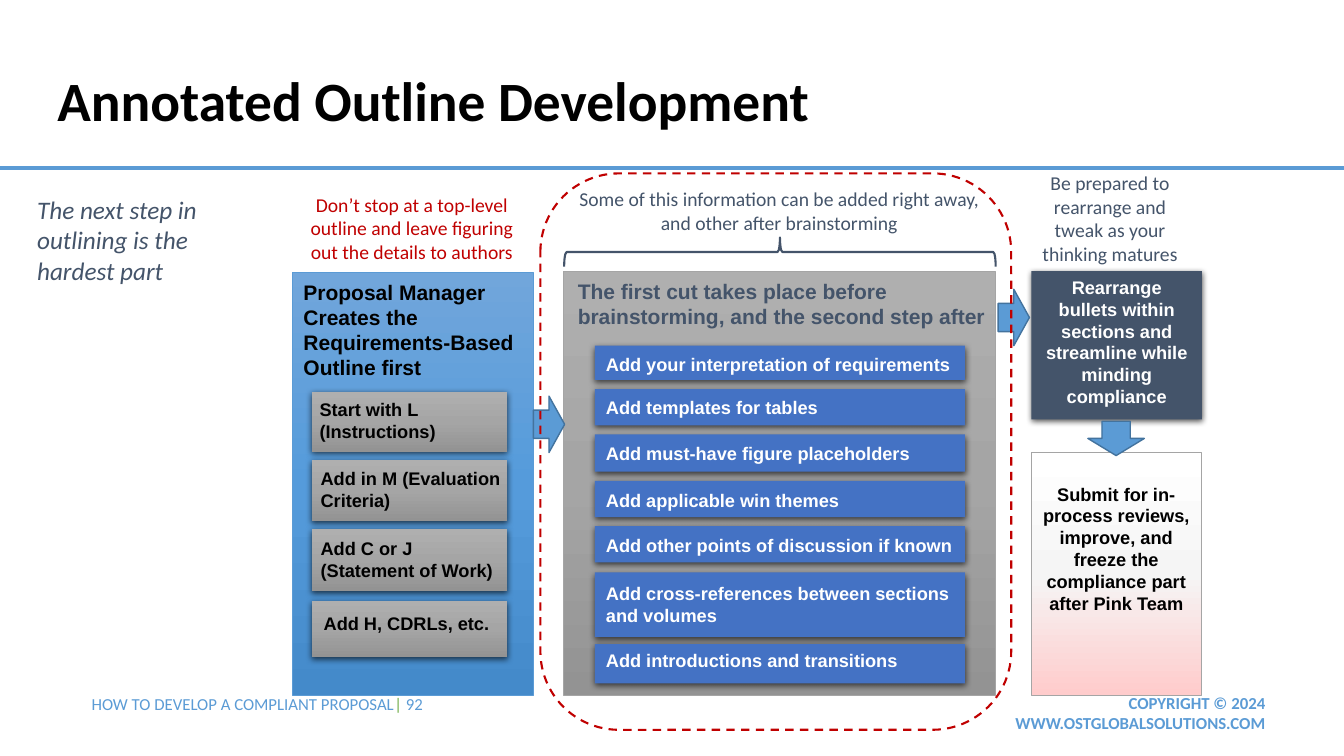
"""Build the Annotated Outline Development slide."""
from copy import deepcopy

from lxml.etree import SubElement
from pptx import Presentation
from pptx.dml.color import RGBColor
from pptx.enum.dml import MSO_LINE
from pptx.enum.shapes import MSO_CONNECTOR, MSO_SHAPE
from pptx.enum.text import MSO_ANCHOR, PP_ALIGN
from pptx.oxml.ns import qn
from pptx.util import Pt

PX = 9144
BLACK = RGBColor(0x00, 0x00, 0x00)
WHITE = RGBColor(0xFF, 0xFF, 0xFF)
SLATE = RGBColor(0x44, 0x54, 0x6A)
SKY = RGBColor(0x5B, 0x9B, 0xD5)
SKY_EDGE = RGBColor(0x43, 0x73, 0x9E)
ROYAL = RGBColor(0x44, 0x72, 0xC4)
GREEN = RGBColor(0x70, 0xAD, 0x47)
RED = RGBColor(0xC0, 0x00, 0x00)
GREY = RGBColor(0xA5, 0xA5, 0xA5)
GREY_FADE = (RGBColor(0xAF, 0xAF, 0xAF), GREY, RGBColor(0x93, 0x93, 0x93))
SKY_FADE = (RGBColor(0x71, 0xA6, 0xDB), RGBColor(0x55, 0x9B, 0xDB), RGBColor(0x44, 0x8A, 0xCA))
PINK_FADE = (WHITE, RGBColor(0xF5, 0xF5, 0xF5), RGBColor(0xFF, 0xCC, 0xCC))

deck = Presentation()
deck.slide_width, deck.slide_height = 1333 * PX, 750 * PX
page = deck.slides.add_slide(deck.slide_layouts[6])


def write(box, text, size=13, color=BLACK, font="Arial", bold=True, italic=False,
          align=PP_ALIGN.LEFT, anchor=MSO_ANCHOR.TOP, inset=(10, 5, 10, 5), spacing=None):
    """Fill a box with a string, or with one paragraph of (text, color) pieces."""
    frame = box.text_frame
    frame.word_wrap = True
    frame.vertical_anchor = anchor
    frame.margin_left, frame.margin_top, frame.margin_right, frame.margin_bottom = (
        side * PX for side in inset)
    lines = [[(line, color)] for line in text.split("\n")] if isinstance(text, str) else [text]
    for index, pieces in enumerate(lines):
        para = frame.add_paragraph() if index else frame.paragraphs[0]
        para.alignment = align
        para.line_spacing = spacing
        for piece, piece_color in pieces:
            span = para.add_run()
            span.text = piece
            span.font.name, span.font.size = font, Pt(size)
            span.font.bold, span.font.italic = bold, italic
            span.font.color.rgb = piece_color


def draw(kind, at, fill=None, line=None, width=0.5, shadow=False):
    """Add a preset shape with a plain, three-stop or empty fill."""
    shape = page.shapes.add_shape(kind, *(length * PX for length in at))
    shape.shadow.inherit = False
    if fill is None:
        shape.fill.background()
    elif isinstance(fill, RGBColor):
        shape.fill.solid()
        shape.fill.fore_color.rgb = fill
    else:
        shape.fill.gradient()
        shape.fill.gradient_angle = 270
        stop_list = shape.element.spPr.find(".//" + qn("a:gsLst"))
        stop_list.insert(1, deepcopy(stop_list[0]))
        for stop, color, position in zip(shape.fill.gradient_stops, fill, (0, 0.5, 1)):
            stop.color.rgb = color
            stop.position = position
    if line is None:
        shape.line.fill.background()
    else:
        shape.line.color.rgb = line
        shape.line.width = Pt(width)
    if shadow:
        effects = shape.element.spPr.find(qn("a:effectLst"))
        outer = SubElement(effects, qn("a:outerShdw"), blurRad=str(Pt(4.5)), dist=str(Pt(1.5)),
                           dir="5400000", algn="ctr", rotWithShape="0")
        tint = SubElement(outer, qn("a:srgbClr"), val="000000")
        SubElement(tint, qn("a:alpha"), val="63000")
    return shape


rule = page.shapes.add_connector(MSO_CONNECTOR.STRAIGHT, 0, 167 * PX, 1333 * PX, 167 * PX)
rule.line.color.rgb = SKY
rule.line.width = Pt(3)
SubElement(rule.element.spPr, qn("a:effectLst"))

manager_panel = draw(MSO_SHAPE.RECTANGLE, (290, 270, 239, 420), SKY_FADE, SKY)
write(manager_panel, "Proposal Manager\nCreates the\nRequirements-Based Outline first",
      size=15, inset=(11, 7, 0, 0))
cut_panel = draw(MSO_SHAPE.RECTANGLE, (559, 269, 428, 421), GREY_FADE, GREY)
write(cut_panel, "The first cut takes place before brainstorming, and the second step after",
      size=15, color=SLATE, inset=(14, 7, 6, 0))

outline_steps = [
    (389, 59, 8, 6, "Start with L (Instructions)"),
    (456, 61, 9, 8, "Add in M (Evaluation Criteria)"),
    (525, 61, 9, 8, "Add C or J (Statement of Work)"),
    (596, 56, 12, 11, "Add H, CDRLs, etc."),
]
for top, height, left_inset, top_inset, text in outline_steps:
    card = draw(MSO_SHAPE.RECTANGLE, (309, top, 194, height), GREY_FADE, shadow=True)
    write(card, text, inset=(left_inset, top_inset, 0, 0))

additions = [
    (343, 34, 8, "Add your interpretation of requirements"),
    (386, 36, 7, "Add templates for tables"),
    (431, 37, 8, "Add must-have figure placeholders"),
    (477, 36, 8, "Add applicable win themes"),
    (522, 36, 8, "Add other points of discussion if known"),
    (568, 64, 10, "Add cross-references between sections and volumes"),
    (639, 39, 5, "Add introductions and transitions"),
]
for top, height, top_inset, text in additions:
    bar = draw(MSO_SHAPE.RECTANGLE, (590, top, 367, height), ROYAL, shadow=True)
    write(bar, text, color=WHITE, inset=(11, top_inset, 0, 0))

rearrange_box = draw(MSO_SHAPE.RECTANGLE, (1023, 269, 169, 147), SLATE, shadow=True)
write(rearrange_box, "Rearrange bullets within sections and streamline while minding compliance",
      color=WHITE, align=PP_ALIGN.CENTER)
submit_box = draw(MSO_SHAPE.RECTANGLE, (1023, 449, 169, 241), PINK_FADE, GREY)
write(submit_box,
      "Submit for in-process reviews, improve, and freeze the compliance part after Pink Team",
      align=PP_ALIGN.CENTER, inset=(7, 30, 8, 0))

for kind, at in [
    (MSO_SHAPE.RIGHT_ARROW, (529, 393, 31, 56)),
    (MSO_SHAPE.RIGHT_ARROW, (990, 287, 31, 56)),
    (MSO_SHAPE.DOWN_ARROW, (1079, 418, 56, 34)),
]:
    draw(kind, at, SKY, SKY_EDGE, 1)

brace = draw(MSO_SHAPE.LEFT_BRACE, (759, 36, 29, 428), line=SLATE, width=1.5)
brace.rotation = 90

note = dict(size=14, font="Calibri", bold=False, align=PP_ALIGN.CENTER)
footer = dict(size=12, font="Calibri", color=SKY)
labels = [
    ((47, 46, 789, 114), "Annotated Outline Development",
     dict(size=39.6, font="Calibri", anchor=MSO_ANCHOR.MIDDLE, spacing=0.9)),
    ((27, 188, 244, 101), "The next step in outlining is the hardest part",
     dict(size=18, font="Calibri", color=SLATE, bold=False, italic=True)),
    ((289, 186, 239, 81),
     "Don’t stop at a top-level outline and leave figuring out the details to authors",
     dict(note, color=RED)),
    ((554, 181, 438, 57),
     "Some of this information can be added right away, and other after brainstorming",
     dict(note, color=SLATE)),
    ((1011, 165, 180, 104), "Be prepared to rearrange and tweak as your thinking matures",
     dict(note, color=SLATE)),
    ((81, 683, 482, 30),
     [("HOW TO DEVELOP A COMPLIANT PROPOSAL", SKY), ("| ", GREEN), ("92", SKY)],
     dict(footer, bold=False)),
    ((992, 682, 273, 50), "COPYRIGHT © 2024 WWW.OSTGLOBALSOLUTIONS.COM",
     dict(footer, align=PP_ALIGN.RIGHT)),
]
for at, text, style in labels:
    write(page.shapes.add_textbox(*(length * PX for length in at)), text, **style)

brainstorm_frame = draw(MSO_SHAPE.ROUNDED_RECTANGLE, (536, 172, 467, 552), line=RED, width=1.5)
brainstorm_frame.line.dash_style = MSO_LINE.DASH

deck.save("out.pptx")
